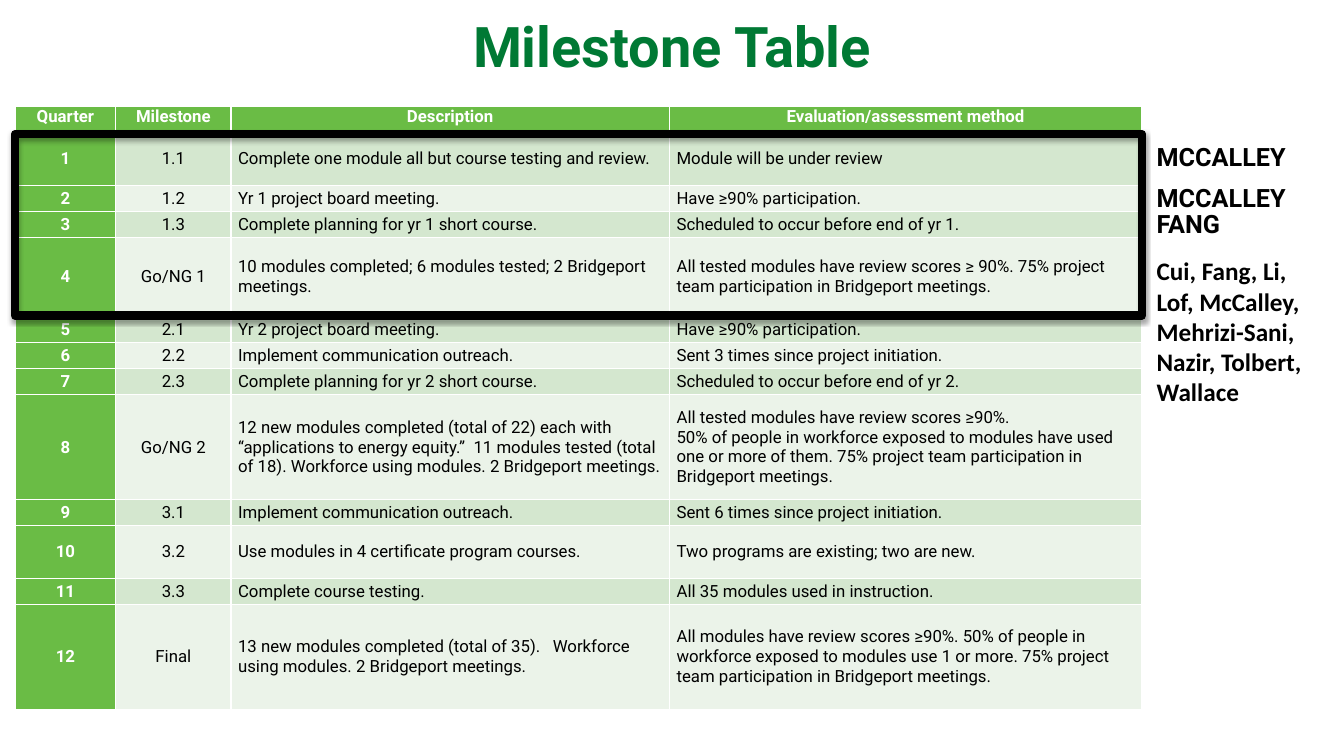
from collections import namedtuple
from dataclasses import dataclass

from lxml.etree import SubElement
from pptx import Presentation
from pptx.dml.color import RGBColor as RGB
from pptx.enum.shapes import MSO_SHAPE as SHAPE
from pptx.enum.text import MSO_ANCHOR as ANCHOR, PP_ALIGN as ALIGN
from pptx.oxml import parse_xml
from pptx.oxml.ns import nsdecls, qn
from pptx.util import Cm, Pt

Box = namedtuple("Box", "left top width height")


@dataclass(frozen=True)
class Theme:
    title: RGB = RGB.from_string("007934")
    header: RGB = RGB.from_string("6ABC45")
    band_dark: RGB = RGB.from_string("D4E7CF")
    band_light: RGB = RGB.from_string("EBF3E9")
    ink: RGB = RGB.from_string("000000")
    paper: RGB = RGB.from_string("FFFFFF")
    font: str = "Roboto"
    team_font: str = "Calibri"
    title_size: int = 40
    table_size: int = 12
    owner_size: int = 18
    frame_line: int = 6


THEME = Theme()
ROW = 0.66
COLUMNS = [2.54, 2.9, 11.05, 11.91]
HEADINGS = ["Quarter", "Milestone", "Description", "Evaluation/assessment method"]
# Row height in units of ROW, milestone, description, evaluation
MILESTONES = [
    (2, "1.1", "Complete one module all but course testing and review.",
     "Module will be under review"),
    (1, "1.2", "Yr 1 project board meeting.", "Have ≥90% participation."),
    (1, "1.3", "Complete planning for yr 1 short course.",
     "Scheduled to occur before end of yr 1."),
    (3, "Go/NG 1", "10 modules completed; 6 modules tested; 2 Bridgeport meetings.",
     "All tested modules have review scores ≥ 90%. 75% project team "
     "participation in Bridgeport meetings."),
    (1, "2.1", "Yr 2 project board meeting.", "Have ≥90% participation."),
    (1, "2.2", "Implement communication outreach.",
     "Sent 3 times since project initiation."),
    (1, "2.3", "Complete planning for yr 2 short course.",
     "Scheduled to occur before end of yr 2."),
    (4, "Go/NG 2",
     "12 new modules completed (total of 22) each with “applications to energy "
     "equity.”  11 modules tested (total of 18). Workforce using modules. "
     "2 Bridgeport meetings.",
     "All tested modules have review scores ≥90%.\n"
     "50% of people in workforce exposed to modules have used one or more of "
     "them. 75% project team participation in Bridgeport meetings."),
    (1, "3.1", "Implement communication outreach.",
     "Sent 6 times since project initiation."),
    (2, "3.2", "Use modules in 4 certificate program courses.",
     "Two programs are existing; two are new."),
    (1, "3.3", "Complete course testing.", "All 35 modules used in instruction."),
    (4, "Final",
     "13 new modules completed (total of 35).   Workforce using modules. "
     "2 Bridgeport meetings.",
     "All modules have review scores ≥90%. 50% of people in workforce exposed to "
     "modules use 1 or more. 75% project team participation in Bridgeport meetings."),
]
YEAR_ONE = MILESTONES[:4]
# Offset from the top of the region, height, text, font
OWNERS = [
    (0, 1.02, "MCCALLEY", THEME.font),
    (1.04, 1.02, "MCCALLEY", THEME.font),
    (1.7, 1.02, "FANG", THEME.font),
    (2.89, 4.11, "Cui, Fang, Li, Lof, McCalley, Mehrizi-Sani, Nazir, Tolbert, Wallace",
     THEME.team_font),
]


def in_cm(box):
    return [Cm(length) for length in box]


def write(tf, text, size, color, bold=True, align=ALIGN.LEFT, font=THEME.font):
    """Fill a text frame, one paragraph for each line of text."""
    tf.word_wrap = True
    for i, line in enumerate(text.split("\n")):
        p = tf.paragraphs[0] if i == 0 else tf.add_paragraph()
        p.alignment = align
        r = p.add_run()
        r.text = line
        r.font.name, r.font.size, r.font.bold = font, Pt(size), bold
        r.font.color.rgb = color


def add_title(slide, box):
    tf = slide.shapes.add_textbox(*in_cm(box)).text_frame
    tf.vertical_anchor = ANCHOR.MIDDLE
    write(tf, "Milestone Table", THEME.title_size, THEME.title, align=ALIGN.CENTER)


def set_borders(cell, bottom):
    tc_pr = cell._tc.get_or_add_tcPr()
    for i, (side, width) in enumerate([("L", 1), ("R", 1), ("T", 1), ("B", bottom)]):
        ln = parse_xml(f'<a:ln{side} {nsdecls("a")} w="{Pt(width)}"/>')
        fill = SubElement(ln, qn("a:solidFill"))
        SubElement(fill, qn("a:srgbClr"), val=str(THEME.paper))
        tc_pr.insert(i, ln)


def style_cell(cell, row, col, text):
    is_header = row == 0
    is_label = is_header or col == 0
    band = THEME.band_dark if row % 2 else THEME.band_light
    cell.fill.solid()
    cell.fill.fore_color.rgb = THEME.header if is_label else band
    cell.margin_left = cell.margin_right = Cm(0.18)
    cell.margin_top = cell.margin_bottom = 0
    cell.vertical_anchor = ANCHOR.TOP if is_header else ANCHOR.MIDDLE
    write(cell.text_frame, text, THEME.table_size,
          THEME.paper if is_label else THEME.ink, bold=is_label,
          align=ALIGN.CENTER if is_header or col < 2 else ALIGN.LEFT)
    set_borders(cell, bottom=3 if is_header else 1)


def add_milestones(slide, box):
    rows = [(1, HEADINGS)]
    rows += [(units, [str(quarter), *texts])
             for quarter, (units, *texts) in enumerate(MILESTONES, 1)]
    table = slide.shapes.add_table(len(rows), len(COLUMNS), *in_cm(box)).table
    for column, width in zip(table.columns, COLUMNS):
        column.width = Cm(width)
    for r, (units, texts) in enumerate(rows):
        table.rows[r].height = Cm(units * ROW)
        for c, text in enumerate(texts):
            style_cell(table.cell(r, c), r, c, text)


def add_year_frame(slide, box):
    """Outline the first year's rows."""
    sp = slide.shapes.add_shape(SHAPE.RECTANGLE, *in_cm(box))
    sp.fill.background()
    sp.line.color.rgb = THEME.ink
    sp.line.width = Pt(THEME.frame_line)
    sp.shadow.inherit = False
    effects = sp._element.spPr.find(qn("a:effectLst"))
    shadow = SubElement(effects, qn("a:outerShdw"), blurRad=str(Pt(3.1)),
                        dist=str(Pt(1.8)), dir="5400000", rotWithShape="0")
    color = SubElement(shadow, qn("a:srgbClr"), val=str(THEME.ink))
    SubElement(color, qn("a:alpha"), val="35000")


def add_owners(slide, box):
    for offset, height, text, font in OWNERS:
        label = Box(box.left, box.top + offset, box.width, height)
        tf = slide.shapes.add_textbox(*in_cm(label)).text_frame
        write(tf, text, THEME.owner_size, THEME.ink, font=font)


def build_slide(prs, box):
    slide = prs.slides.add_slide(prs.slide_layouts[6])
    add_title(slide, Box(box.left, box.top, box.width, 2.26))
    units = 1 + sum(milestone[0] for milestone in MILESTONES)
    table = Box(box.left + 0.38, box.top + 2.69, sum(COLUMNS), units * ROW)
    add_milestones(slide, table)
    year_height = sum(milestone[0] for milestone in YEAR_ONE) * ROW
    add_year_frame(slide, Box(table.left, table.top + ROW + 0.03,
                              table.width, year_height - 0.05))
    add_owners(slide, Box(table.left + table.width + 0.12, table.top + 0.74, 4.78, 7))


def main():
    prs = Presentation()
    prs.slide_width, prs.slide_height = Cm(33.87), Cm(19.05)
    build_slide(prs, Box(0, 0, 33.87, 19.05))
    prs.save("out.pptx")


if __name__ == "__main__":
    main()
